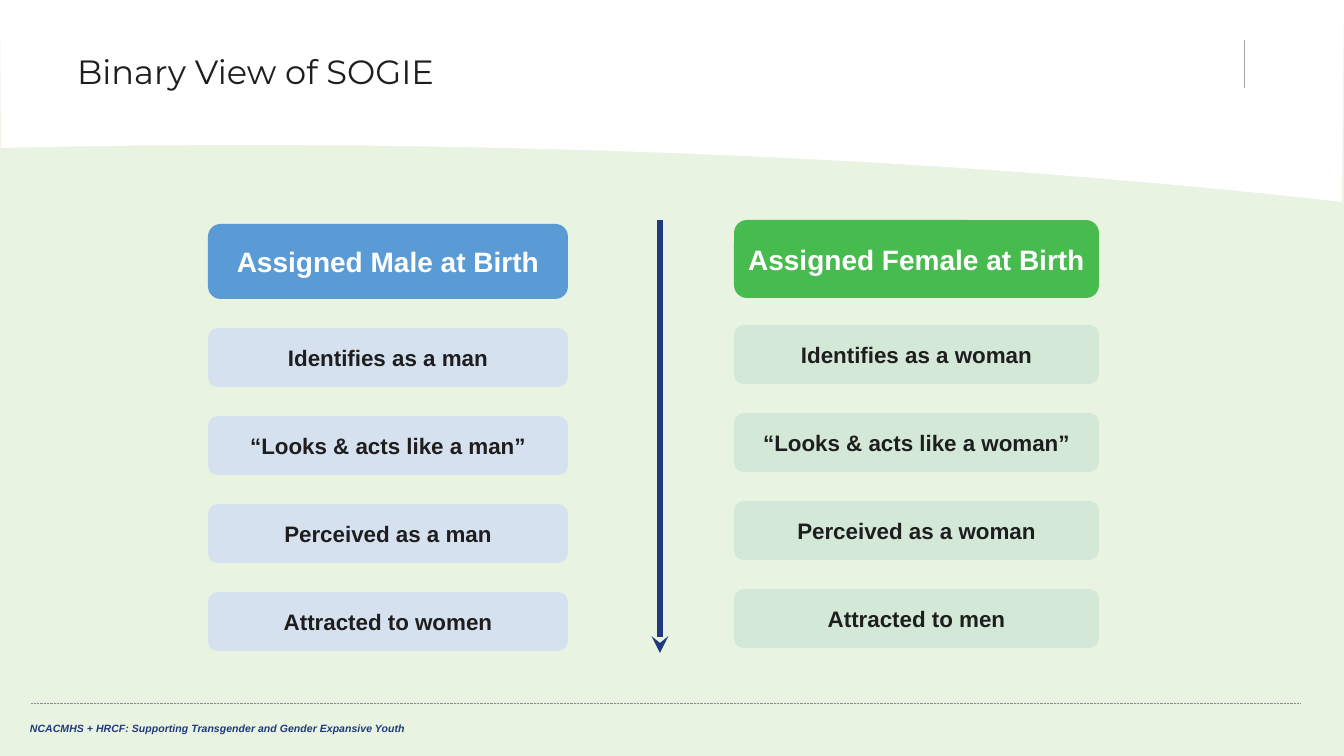
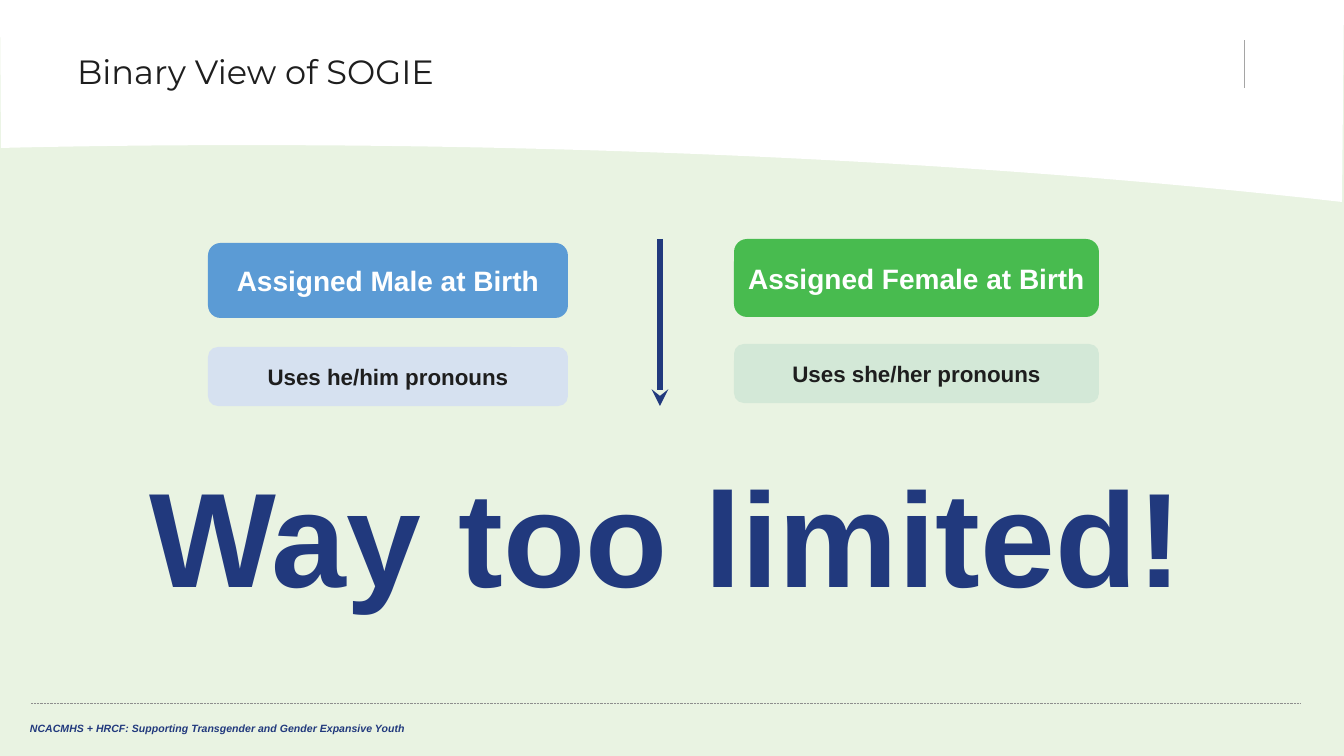
from lxml.etree import SubElement
from pptx import Presentation
from pptx.dml.color import RGBColor
from pptx.enum.dml import MSO_LINE
from pptx.enum.shapes import MSO_CONNECTOR, MSO_SHAPE
from pptx.enum.text import MSO_ANCHOR, MSO_AUTO_SIZE, PP_ALIGN
from pptx.oxml.ns import qn
from pptx.util import Pt

SLIDE_WIDTH, SLIDE_HEIGHT = 1344, 756
SCALE = 12192000 / SLIDE_WIDTH
ROW_PITCH = 88
ROW_HEIGHT = 59
ARROW_X = 660
ARROW_TOP = 220
BAND_CURVE = [(1342, 202), (768, 137), (209, 143), (1, 148)]
CURVE_STEPS = 48
COLORS = {
    "background": "E9F3E2",
    "white": "FFFFFF",
    "ink": "1E1E1E",
    "navy": "21397D",
    "footer_rule": "8E8E8E",
    "title_rule": "A5A5A5",
    "male_header": "5B9BD5",
    "male_row": "D6E1F0",
    "female_header": "48BB4F",
    "female_row": "D3E8D7",
}
COLUMNS = {
    "male": {"left": 208, "width": 360, "header_top": 224, "header_height": 75,
             "rows_top": 328, "header": "Assigned Male at Birth"},
    "female": {"left": 734, "width": 365, "header_top": 220, "header_height": 78,
               "rows_top": 325, "header": "Assigned Female at Birth"},
}
TITLE = "Binary View of SOGIE"
FOOTER = "NCACMHS + HRCF: Supporting Transgender and Gender Expansive Youth"


def px(*lengths):
    """Turn px lengths into a list of EMU."""
    return [round(length * SCALE) for length in lengths]


def color(name):
    """Look up a named colour."""
    return RGBColor.from_string(COLORS[name])


def paint(shape, fill):
    """Give a shape a plain fill with no line or shadow."""
    shape.shadow.inherit = False
    shape.fill.solid()
    shape.fill.fore_color.rgb = color(fill)
    shape.line.fill.background()


def add_run(paragraph, text, size, fill, font="Arial", bold=True, italic=False):
    """Add one formatted run to a paragraph."""
    run = paragraph.add_run()
    run.text = text
    run.font.name = font
    run.font.size = Pt(size)
    run.font.bold = bold
    run.font.italic = italic
    run.font.color.rgb = color(fill)


def add_text(slide, box, text, size, italic=False):
    """Add a navy text box."""
    shape = slide.shapes.add_textbox(*px(*box))
    shape.text_frame.word_wrap = True
    add_run(shape.text_frame.paragraphs[0], text, size, "navy", italic=italic)


def add_line(slide, start, end, fill, width, dash=None, arrow=None):
    """Add a straight line with an optional dash and arrowhead."""
    connector = slide.shapes.add_connector(MSO_CONNECTOR.STRAIGHT, *px(*start, *end))
    connector.line.color.rgb = color(fill)
    connector.line.width = Pt(width)
    if dash:
        connector.line.dash_style = dash
    if arrow:
        SubElement(connector.line._get_or_add_ln(), qn("a:tailEnd"), type=arrow)
    SubElement(connector._element.spPr, qn("a:effectLst"))


def curve_points(controls, steps):
    """Sample a cubic curve after its starting point."""
    points = []
    for step in range(1, steps + 1):
        t = step / steps
        weights = [(1 - t) ** 3, 3 * t * (1 - t) ** 2, 3 * t * t * (1 - t), t ** 3]
        points.append(px(*(sum(weight * value for weight, value in zip(weights, axis))
                           for axis in zip(*controls))))
    return points


def add_band(slide):
    """Draw the white curved band and send it behind the title."""
    builder = slide.shapes.build_freeform(0, 0)
    corners = [px(SLIDE_WIDTH, 0), px(*BAND_CURVE[0])]
    builder.add_line_segments(corners + curve_points(BAND_CURVE, CURVE_STEPS))
    band = builder.convert_to_shape()
    paint(band, "white")
    slide.shapes.title._element.addprevious(band._element)


def format_title(slide):
    """Place and fill the title placeholder."""
    title = slide.shapes.title
    title.left, title.top, title.width, title.height = px(67, 0, 1140, 148)
    frame = title.text_frame
    frame.auto_size = MSO_AUTO_SIZE.NONE
    frame.vertical_anchor = MSO_ANCHOR.MIDDLE
    paragraph = frame.paragraphs[0]
    paragraph.alignment = PP_ALIGN.LEFT
    paragraph.line_spacing = 0.9
    add_run(paragraph, TITLE, 24, "ink", "Montserrat", bold=False)


def add_base_slide(presentation):
    """Add a slide with the shared band, rules, footer and title."""
    slide = presentation.slides.add_slide(presentation.slide_layouts.get_by_name("Title Only"))
    add_band(slide)
    format_title(slide)
    add_line(slide, (31, 703), (1301, 703), "footer_rule", 0.5, dash=MSO_LINE.ROUND_DOT)
    add_text(slide, (20, 717, 677, 23), FOOTER, 7.5, italic=True)
    add_line(slide, (1244, 88), (1244, 40), "title_rule", 0.5)
    return slide


def add_card(group, box, text, size, fill, ink):
    """Add a rounded card with centred text."""
    card = group.shapes.add_shape(MSO_SHAPE.ROUNDED_RECTANGLE, *px(*box))
    paint(card, fill)
    frame = card.text_frame
    frame.word_wrap = True
    frame.margin_left = frame.margin_top = frame.margin_right = frame.margin_bottom = 0
    frame.vertical_anchor = MSO_ANCHOR.MIDDLE
    paragraph = frame.paragraphs[0]
    paragraph.alignment = PP_ALIGN.CENTER
    add_run(paragraph, text, size, ink)


def add_column(slide, name, rows, shift):
    """Add a header card and its evenly spaced row cards."""
    column = COLUMNS[name]
    left, width = column["left"], column["width"]
    group = slide.shapes.add_group_shape()
    header_box = (left, column["header_top"] + shift, width, column["header_height"])
    add_card(group, header_box, column["header"], 20, f"{name}_header", "white")
    for index, text in enumerate(rows):
        top = column["rows_top"] + shift + index * ROW_PITCH
        add_card(group, (left, top, width, ROW_HEIGHT), text, 16, f"{name}_row", "ink")


def add_comparison(slide, male_rows, female_rows, arrow_end, shift=0):
    """Add both columns and the arrow between them."""
    add_column(slide, "male", male_rows, shift)
    add_column(slide, "female", female_rows, shift)
    add_line(slide, (ARROW_X, ARROW_TOP + shift), (ARROW_X, arrow_end), "navy", 4,
             arrow="stealth")


def main():
    """Build and save the presentation."""
    presentation = Presentation()
    presentation.slide_width, presentation.slide_height = px(SLIDE_WIDTH, SLIDE_HEIGHT)
    background = presentation.slide_master.background.fill
    background.solid()
    background.fore_color.rgb = color("background")

    slide = add_base_slide(presentation)
    add_comparison(
        slide,
        ["Identifies as a man", "“Looks & acts like a man”",
         "Perceived as a man", "Attracted to women"],
        ["Identifies as a woman", "“Looks & acts like a woman”",
         "Perceived as a woman", "Attracted to men"],
        arrow_end=653,
    )

    slide = add_base_slide(presentation)
    add_text(slide, (140, 448, 1062, 173), "Way too limited!", 96)
    add_comparison(slide, ["Uses he/him pronouns"], ["Uses she/her pronouns"],
                   arrow_end=406, shift=19)

    presentation.save("out.pptx")


if __name__ == "__main__":
    main()
